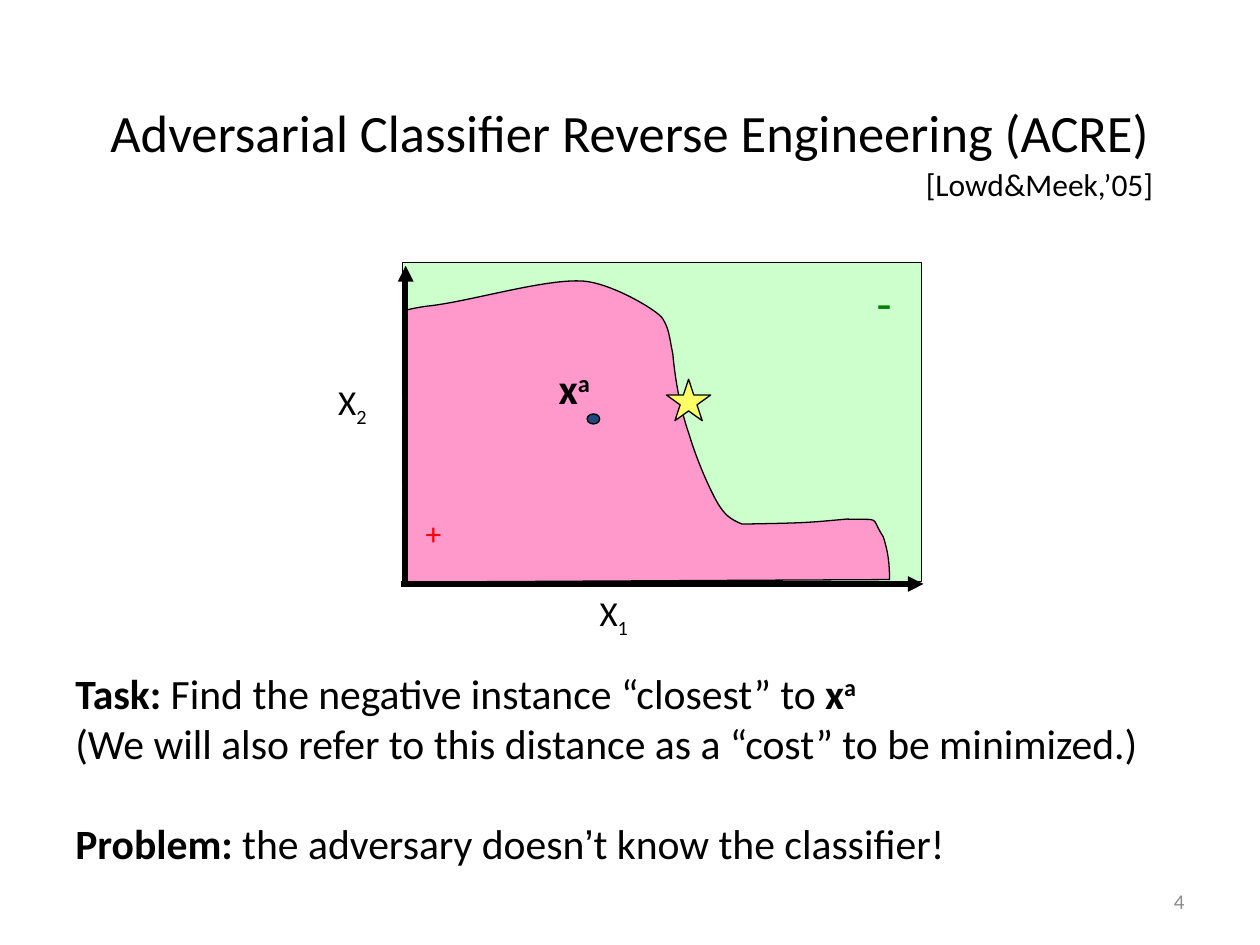
import pptx
import pptx.util
import pptx.dml.color
import pptx.enum.shapes
import pptx.enum.text
import pptx.oxml.ns
import lxml.etree

RGB = pptx.dml.color.RGBColor
SHAPE = pptx.enum.shapes.MSO_SHAPE
ALIGN = pptx.enum.text.PP_ALIGN
ANCHOR = pptx.enum.text.MSO_ANCHOR
qn = pptx.oxml.ns.qn

BLACK = RGB(0x00, 0x00, 0x00)
GREY = RGB(0x8C, 0x8C, 0x8C)
RED = RGB(0xFF, 0x00, 0x00)
GREEN = RGB(0x00, 0x80, 0x00)
MINT = RGB(0xCC, 0xFF, 0xCC)
PINK = RGB(0xFF, 0x99, 0xCC)
YELLOW = RGB(0xFF, 0xFF, 0x66)
NAVY = RGB(0x1F, 0x49, 0x7D)

COLS, ROWS = 100, 75  # square grid cells over the whole slide
BOLD = {"bold": True}
SUPER = {"bold": True, "base": 30}
SUB = {"base": -25}


class Deck:
    font = "Calibri"
    outline = 0.75

    def __init__(self, width, height):
        self.prs = pptx.Presentation()
        self.prs.slide_width = pptx.util.Inches(width)
        self.prs.slide_height = pptx.util.Inches(height)
        self.s = self.prs.slides.add_slide(self.prs.slide_layouts[6])

    def x(self, cols):
        return round(self.prs.slide_width * cols / COLS)

    def y(self, rows):
        return round(self.prs.slide_height * rows / ROWS)

    def box(self, left, top, width, height):
        return self.x(left), self.y(top), self.x(width), self.y(height)

    def paint(self, sp, fill):
        sp.shadow.inherit = False
        sp.fill.solid()
        sp.fill.fore_color.rgb = fill
        sp.line.color.rgb = BLACK
        sp.line.width = pptx.util.Pt(self.outline)

    def shape(self, kind, at, fill):
        self.paint(self.s.shapes.add_shape(kind, *self.box(*at)), fill)

    def region(self, start, curves, fill):
        """A closed outline of cubic curves: two control points and an end each."""
        fb = self.s.shapes.build_freeform(self.x(start[0]), self.y(start[1]))
        fb.add_line_segments([(self.x(px), self.y(py))
                              for curve in curves for px, py in curve], close=True)
        sp = fb.convert_to_shape()
        # Join each three line points into one curve
        lines = list(sp._element.iter(qn("a:lnTo")))
        for i in range(0, 3 * len(curves), 3):
            cubic = lxml.etree.Element(qn("a:cubicBezTo"))
            lines[i].addprevious(cubic)
            for line in lines[i:i + 3]:
                cubic.append(line[0])
                line.getparent().remove(line)
        self.paint(sp, fill)

    def arrow(self, x1, y1, x2, y2, width=3):
        cx = self.s.shapes.add_connector(
            pptx.enum.shapes.MSO_CONNECTOR.STRAIGHT,
            self.x(x1), self.y(y1), self.x(x2), self.y(y2))
        cx.line.color.rgb = BLACK
        cx.line.width = pptx.util.Pt(width)
        lxml.etree.SubElement(cx.line._get_or_add_ln(), qn("a:tailEnd"), type="triangle")
        lxml.etree.SubElement(cx._element.spPr, qn("a:effectLst"))

    def text(self, at, paragraphs, size, color=BLACK, align=ALIGN.LEFT,
             anchor=ANCHOR.TOP, wrap=False, gap=0):
        """Each paragraph is a list of (text, style) runs; "\\n" breaks the line."""
        tf = self.s.shapes.add_textbox(*self.box(*at)).text_frame
        tf.word_wrap = wrap
        tf.vertical_anchor = anchor
        for i, runs in enumerate(paragraphs):
            p = tf.add_paragraph() if i else tf.paragraphs[0]
            p.alignment = align
            p.space_before = pptx.util.Pt(gap if i else 0)
            for words, style in runs:
                if words == "\n":
                    p.add_line_break()
                    continue
                r = p.add_run()
                r.text = words
                r.font.name = style.get("font", self.font)
                r.font.size = pptx.util.Pt(size)
                r.font.bold = style.get("bold", False)
                r.font.color.rgb = color
                if "base" in style:
                    r.font._element.set("baseline", str(style["base"] * 1000))


def main():
    deck = Deck(10, 7.5)

    # Title, citation and slide number
    deck.text((7.5, 4.2, 85, 12.5),
              [[("Adversarial Classifier Reverse Engineering (ACRE)", {})]],
              30, align=ALIGN.CENTER, anchor=ANCHOR.MIDDLE, wrap=True)
    deck.text((72.5, 12.6, 20.4, 4), [[("[Lowd&Meek,’05]", {})]], 18)
    deck.text((71.7, 69.5, 23.3, 4), [[("4", {})]], 12, GREY,
              ALIGN.RIGHT, ANCHOR.MIDDLE, wrap=True)

    # Task and problem
    deck.text((5, 52.5, 90, 16.7), [
        [("Task: ", BOLD), ("Find the negative instance “closest” to ", {}),
         ("x", BOLD), ("a", SUPER), ("\n", {}),
         ("(We will also refer to this distance as a “cost” to be minimized.)", {})],
        [("Problem:", BOLD), (" the adversary doesn", {}),
         ("’", {"font": "Arial"}), ("t know the classifier!", {})],
    ], 23.8, wrap=True, gap=28.6)

    # Negative area, with the positive region on top
    deck.shape(SHAPE.RECTANGLE, (31.95, 20.85, 41.2, 25.3), MINT)
    deck.region((32, 46.2), [
        ((32, 39), (31.9, 31.9), (32.1, 24.7)),
        ((32.1, 24.6), (33.2, 24.4), (33.9, 24.3)),
        ((37, 24), (42.9, 22.2), (46, 22.3)),
        ((48.3, 22.3), (52.3, 24.7), (52.6, 25.3)),
        ((53.1, 26.1), (53.1, 26.6), (53.4, 28.1)),
        ((53.6, 30.2), (54, 32.5), (54.7, 34.5)),
        ((55.3, 36.5), (56.3, 38.8), (57, 40)),
        ((57.5, 40.8), (57.9, 41.2), (58.9, 41.6)),
        ((64.1, 41.5), (63.9, 41.5), (67.2, 41.2)),
        ((70.1, 41.3), (69, 40.9), (70.1, 42.6)),
        ((70.5, 43.8), (70.6, 44.8), (70.6, 46)),
    ], PINK)

    # Axes
    deck.arrow(32.2, 46.4, 32.2, 21.1)
    deck.arrow(31.8, 46.35, 73.3, 46.35)
    for left, top, index in ((46.6, 46.45, "1"), (25.85, 29.7, "2")):
        deck.text((left, top, 4.9, 4.3), [[("X", {}), (index, SUB)]], 20)

    # Class signs
    deck.text((32.8, 40.3, 4, 5), [[("+", {})]], 18, RED)
    deck.text((68.6, 21.1, 3.3, 5.7), [[("-", {})]], 28, GREEN)

    # Closest negative instance and the adversary's own instance
    deck.shape(SHAPE.STAR_5_POINT, (52.9, 30.1, 3.5, 3.3), YELLOW)
    deck.text((43.35, 28.3, 4.7, 5), [[("x", BOLD), ("a", SUPER)]], 24)
    deck.shape(SHAPE.OVAL, (46.6, 32.85, 1, 0.8), NAVY)

    deck.prs.save("out.pptx")


if __name__ == "__main__":
    main()
